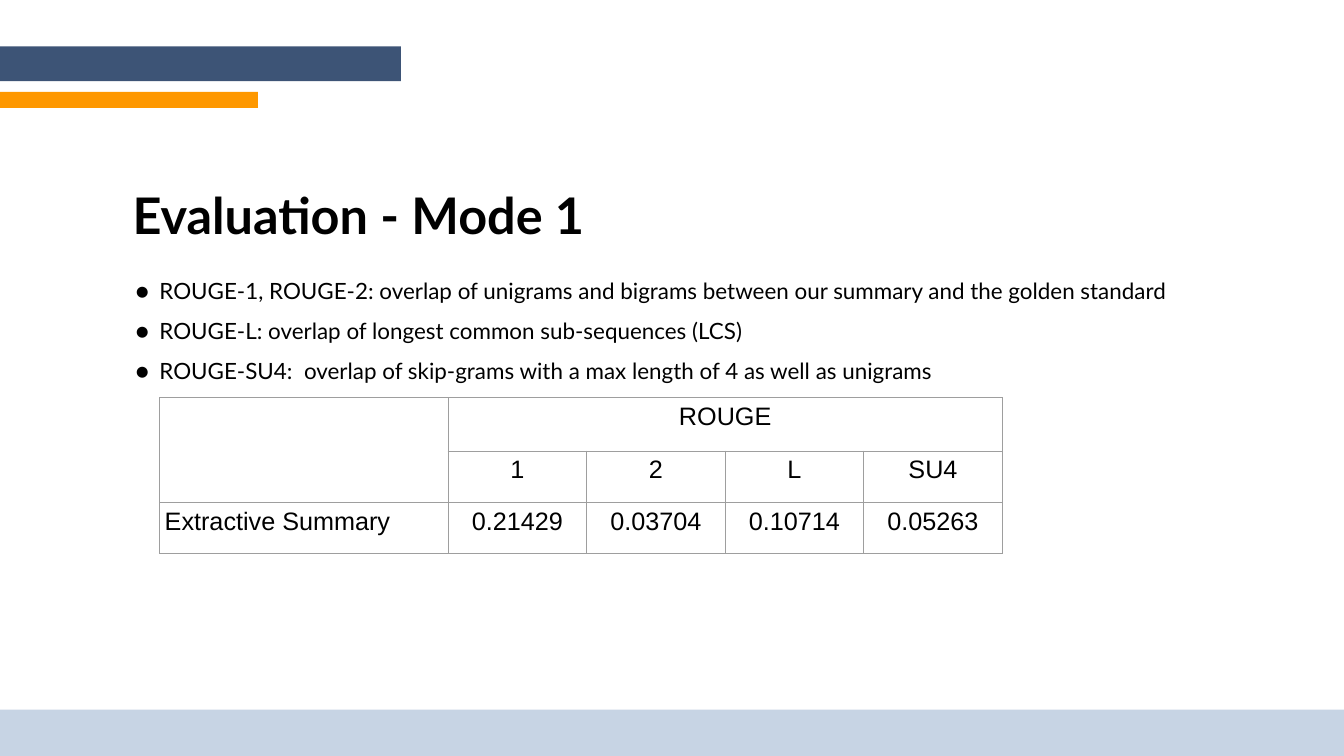
import lxml.etree
import pptx
import pptx.dml.color
import pptx.enum.shapes
import pptx.enum.text
import pptx.oxml.ns
import pptx.util

Cm = pptx.util.Cm
Pt = pptx.util.Pt
RGBColor = pptx.dml.color.RGBColor
qn = pptx.oxml.ns.qn

BLACK = RGBColor(0x00, 0x00, 0x00)
NAVY = RGBColor(0x3D, 0x54, 0x76)
ORANGE = RGBColor(0xFE, 0x98, 0x00)
PALE_BLUE = RGBColor(0xC7, 0xD4, 0xE4)
GRID_GREY = RGBColor(0x9E, 0x9E, 0x9E)

SLIDE_WIDTH, SLIDE_HEIGHT = Cm(67.72), Cm(38.1)

BULLETS = [
    "ROUGE-1, ROUGE-2: overlap of unigrams and bigrams between our summary and the golden standard",
    "ROUGE-L: overlap of longest common sub-sequences (LCS)",
    "ROUGE-SU4:  overlap of skip-grams with a max length of 4 as well as unigrams",
]
SCORES = [
    ["", "ROUGE", "", "", ""],
    ["", "1", "2", "L", "SU4"],
    ["Extractive Summary", "0.21429", "0.03704", "0.10714", "0.05263"],
]


def format_runs(paragraph, font_name, size, bold=False):
    for run in paragraph.runs:
        run.font.name = font_name
        run.font.size = Pt(size)
        run.font.bold = bold
        run.font.color.rgb = BLACK


def set_margins(target, horizontal, vertical):
    target.margin_left = target.margin_right = horizontal
    target.margin_top = target.margin_bottom = vertical


def place_placeholder(placeholder, left, top, width, height):
    placeholder.left, placeholder.top = left, top
    placeholder.width, placeholder.height = width, height
    text_frame = placeholder.text_frame
    text_frame.word_wrap = True
    text_frame.auto_size = pptx.enum.text.MSO_AUTO_SIZE.NONE
    text_frame.vertical_anchor = pptx.enum.text.MSO_ANCHOR.TOP
    return text_frame


def add_bar(slide, left, top, width, height, color):
    shape = slide.shapes.add_shape(
        pptx.enum.shapes.MSO_SHAPE.RECTANGLE, left, top, width, height)
    shape.shadow.inherit = False
    shape.fill.solid()
    shape.fill.fore_color.rgb = color
    shape.line.fill.background()


def add_header_bars(slide, left, top, width, height):
    add_bar(slide, left, top, width, Cm(1.75), NAVY)
    orange_height = Cm(0.81)
    add_bar(slide, left, top + height - orange_height, Cm(13), orange_height, ORANGE)


def add_footer_band(slide, left, top, width, height):
    add_bar(slide, left, top, width, height, PALE_BLUE)


def fill_title(slide, left, top, width, height):
    text_frame = place_placeholder(slide.shapes.title, left, top, width, height)
    set_margins(text_frame, Cm(0.25), Cm(0.13))
    text_frame.text = "Evaluation - Mode 1"
    paragraph = text_frame.paragraphs[0]
    paragraph.alignment = pptx.enum.text.PP_ALIGN.LEFT
    format_runs(paragraph, "Lato", 72, bold=True)


def set_bullet(paragraph):
    properties = paragraph._p.get_or_add_pPr()
    properties.set("marL", str(Cm(1.27)))
    properties.set("indent", str(-Cm(1.19)))
    bullet_color = lxml.etree.SubElement(properties, qn("a:buClr"))
    lxml.etree.SubElement(bullet_color, qn("a:srgbClr"), val=str(BLACK))
    lxml.etree.SubElement(properties, qn("a:buFont"), typeface="Lato")
    lxml.etree.SubElement(properties, qn("a:buChar"), char="●")


def fill_bullets(slide, left, top, width, height):
    text_frame = place_placeholder(slide.placeholders[1], left, top, width, height)
    set_margins(text_frame, Cm(0.61), Cm(0.3))
    text_frame.text = "\n".join(BULLETS)
    for paragraph in text_frame.paragraphs:
        paragraph.line_spacing = 1.5
        paragraph.space_before = Pt(0)
        set_bullet(paragraph)
        format_runs(paragraph, "Lato", 32)


def set_borders(cell):
    properties = cell._tc.get_or_add_tcPr()
    for side in ("a:lnL", "a:lnR", "a:lnT", "a:lnB"):
        line = lxml.etree.SubElement(properties, qn(side), w=str(Pt(1.5)))
        fill = lxml.etree.SubElement(line, qn("a:solidFill"))
        lxml.etree.SubElement(fill, qn("a:srgbClr"), val=str(GRID_GREY))


def add_score_table(slide, left, top, width, height):
    row_count, column_count = len(SCORES), len(SCORES[0])
    table = slide.shapes.add_table(
        row_count, column_count, left, top, width, height).table
    table.first_row = table.horz_banding = False

    # A wide label column, then equal score columns
    label_width = Cm(14.53)
    for index, column in enumerate(table.columns):
        column.width = label_width if index == 0 else (width - label_width) // (column_count - 1)
    header_height = Cm(2.69)
    for index, row in enumerate(table.rows):
        row.height = header_height if index == 0 else (height - header_height) // (row_count - 1)

    # Cell text and borders
    for row_index, values in enumerate(SCORES):
        for column_index, value in enumerate(values):
            cell = table.cell(row_index, column_index)
            set_margins(cell, Cm(0.25), Cm(0.25))
            set_borders(cell)
            cell.fill.background()
            cell.text_frame.text = value
            paragraph = cell.text_frame.paragraphs[0]
            if column_index > 0:
                paragraph.alignment = pptx.enum.text.PP_ALIGN.CENTER
            format_runs(paragraph, "Arial", 36)

    # Merged headings
    table.cell(0, 0).merge(table.cell(1, 0))
    table.cell(0, 1).merge(table.cell(0, column_count - 1))


def main():
    presentation = pptx.Presentation()
    presentation.slide_width, presentation.slide_height = SLIDE_WIDTH, SLIDE_HEIGHT
    slide = presentation.slides.add_slide(presentation.slide_layouts[1])

    footer_height = Cm(2.34)
    add_footer_band(slide, 0, SLIDE_HEIGHT - footer_height, SLIDE_WIDTH, footer_height)
    add_header_bars(slide, 0, Cm(2.34), Cm(20.2), Cm(3.1))
    fill_title(slide, Cm(6.43), Cm(9.14), Cm(43.46), Cm(5.74))
    fill_bullets(slide, Cm(6.15), Cm(12.98), Cm(55.4), Cm(15.72))
    add_score_table(slide, Cm(8.05), Cm(20.04), Cm(42.45), Cm(7.87))

    presentation.save("out.pptx")


if __name__ == "__main__":
    main()
